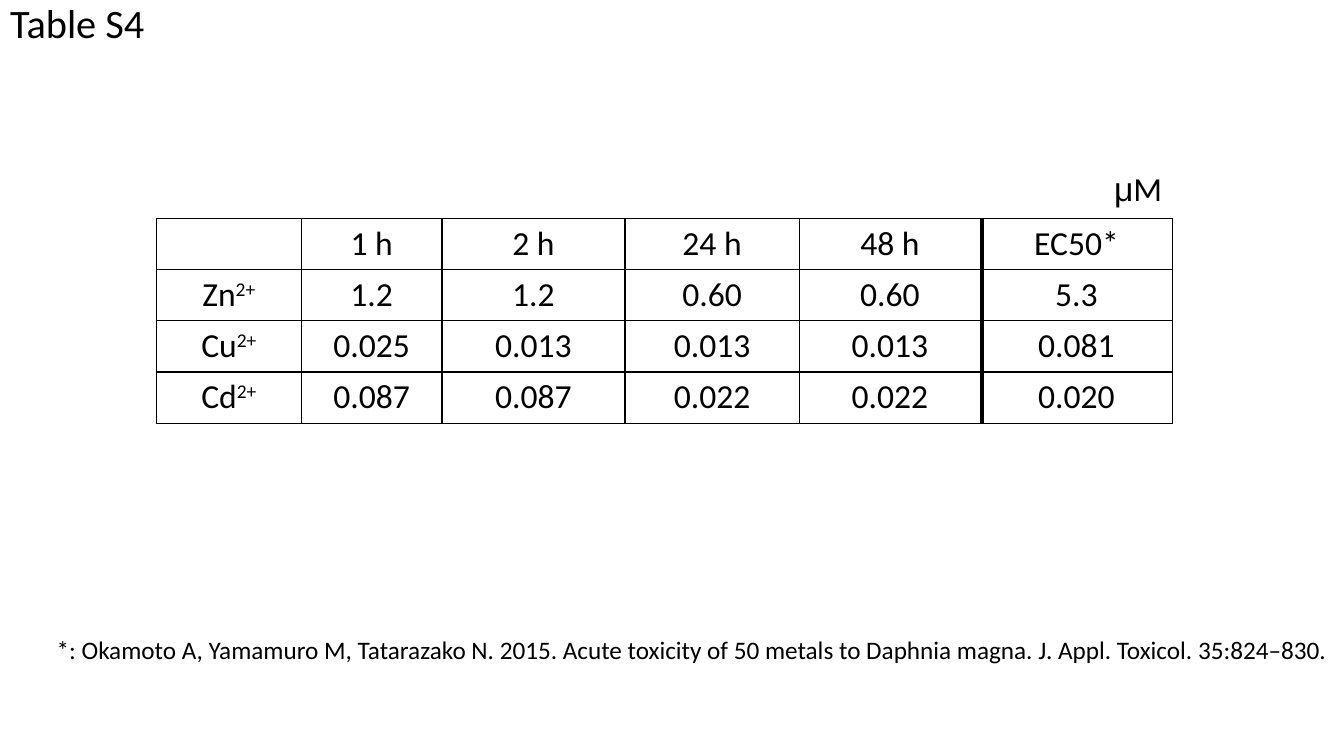
from dataclasses import dataclass

import lxml.etree
import pptx
import pptx.dml.color
import pptx.enum.shapes
import pptx.enum.text
import pptx.oxml.ns
import pptx.slide
import pptx.table
import pptx.text.text
import pptx.util

Pt = pptx.util.Pt
PP_ALIGN = pptx.enum.text.PP_ALIGN
qn = pptx.oxml.ns.qn


@dataclass(frozen=True)
class Theme:
    ink: str = "000000"
    font: str = "Calibri"
    symbol_font: str = "Arial"
    title_size: float = 28.8
    body_size: float = 24
    note_size: float = 18
    border: float = 1
    divider: float = 3


@dataclass(frozen=True)
class Box:
    left: float
    top: float
    width: float
    height: float


@dataclass(frozen=True)
class Span:
    text: str
    font: str
    superscript: bool = False


@dataclass(frozen=True)
class Label:
    spans: tuple[Span, ...]
    box: Box
    size: float
    align: PP_ALIGN
    wrap: bool


@dataclass(frozen=True)
class Metal:
    symbol: str
    values: tuple[str, ...]


THEME = Theme()
SLIDE_WIDTH, SLIDE_HEIGHT = 960, 540
TITLE_BOX = Box(0, 6.5, 111.6, 23)
TABLE_LEFT, TABLE_TOP, ROW_HEIGHT = 111.6, 156.2, 36.4
COLUMN_WIDTHS = (103.7, 100.4, 130.8, 124.4, 129.7, 136.8)
HEADINGS = ("1 h", "2 h", "24 h", "48 h", "EC50*")
METALS = (
    Metal("Zn", ("1.2", "1.2", "0.60", "0.60", "5.3")),
    Metal("Cu", ("0.025", "0.013", "0.013", "0.013", "0.081")),
    Metal("Cd", ("0.087", "0.087", "0.022", "0.022", "0.020")),
)
CITATION = (
    "*: Okamoto A, Yamamuro M, Tatarazako N. 2015. Acute toxicity of 50 metals "
    "to Daphnia magna. J. Appl. Toxicol. 35:824–830."
)
LABELS = (
    Label((Span("μ", THEME.symbol_font), Span("M", THEME.font)),
          Box(788.4, 116.6, 49, 36), THEME.body_size, PP_ALIGN.CENTER, False),
    Label((Span(CITATION, THEME.font),),
          Box(33.4, 449.3, 926.6, 29), THEME.note_size, PP_ALIGN.LEFT, True),
)


def format_run(r: pptx.text.text._Run, font: str, size: float) -> None:
    r.font.name = font
    r.font.size = Pt(size)
    r.font.color.rgb = pptx.dml.color.RGBColor.from_string(THEME.ink)


def write_spans(p: pptx.text.text._Paragraph, spans: tuple[Span, ...],
                size: float, align: PP_ALIGN) -> None:
    p.alignment = align
    for span in spans:
        r = p.add_run()
        r.text = span.text
        format_run(r, span.font, size)
        if span.superscript:
            r.font._element.set("baseline", "30000")


def set_title(s: pptx.slide.Slide, text: str, box: Box) -> None:
    title = s.shapes.title
    title.left, title.top = Pt(box.left), Pt(box.top)
    title.width, title.height = Pt(box.width), Pt(box.height)
    tf = title.text_frame
    tf.text = text
    tf.auto_size = pptx.enum.text.MSO_AUTO_SIZE.NONE
    tf.vertical_anchor = pptx.enum.text.MSO_ANCHOR.MIDDLE
    p = tf.paragraphs[0]
    p.alignment = PP_ALIGN.LEFT
    p.line_spacing = 0.9
    format_run(p.runs[0], THEME.font, THEME.title_size)


def add_label(s: pptx.slide.Slide, label: Label) -> None:
    box = label.box
    sp = s.shapes.add_textbox(Pt(box.left), Pt(box.top), Pt(box.width), Pt(box.height))
    tf = sp.text_frame
    tf.word_wrap = label.wrap
    tf.auto_size = pptx.enum.text.MSO_AUTO_SIZE.SHAPE_TO_FIT_TEXT
    write_spans(tf.paragraphs[0], label.spans, label.size, label.align)


def style_cell(cell: pptx.table._Cell) -> None:
    """Border the cell on every side and clear its fill."""
    tc_pr = cell._tc.get_or_add_tcPr()
    for side in ("a:lnL", "a:lnR", "a:lnT", "a:lnB"):
        ln = lxml.etree.SubElement(tc_pr, qn(side), w=str(Pt(THEME.border)))
        fill = lxml.etree.SubElement(ln, qn("a:solidFill"))
        lxml.etree.SubElement(fill, qn("a:srgbClr"), val=THEME.ink)
    cell.fill.background()


def add_metal_table(s: pptx.slide.Slide) -> None:
    rows = [((), *((Span(h, THEME.font),) for h in HEADINGS))]
    for metal in METALS:
        ion = (Span(metal.symbol, THEME.font), Span("2+", THEME.font, True))
        rows.append((ion, *((Span(v, THEME.font),) for v in metal.values)))
    table = s.shapes.add_table(
        len(rows), len(COLUMN_WIDTHS), Pt(TABLE_LEFT), Pt(TABLE_TOP),
        Pt(sum(COLUMN_WIDTHS)), Pt(ROW_HEIGHT * len(rows))).table
    table.first_row = table.horz_banding = False
    for column, width in zip(table.columns, COLUMN_WIDTHS):
        column.width = Pt(width)
    for i, row in enumerate(rows):
        table.rows[i].height = Pt(ROW_HEIGHT)
        for j, spans in enumerate(row):
            cell = table.cell(i, j)
            style_cell(cell)
            write_spans(cell.text_frame.paragraphs[0], spans,
                        THEME.body_size, PP_ALIGN.CENTER)


def add_divider(s: pptx.slide.Slide) -> None:
    """Draw the heavy rule in front of the EC50 column."""
    x = Pt(TABLE_LEFT + sum(COLUMN_WIDTHS[:-1]) + 0.7)
    bottom = Pt(TABLE_TOP + ROW_HEIGHT * (len(METALS) + 1) + 1)
    line = s.shapes.add_connector(
        pptx.enum.shapes.MSO_CONNECTOR.STRAIGHT, x, Pt(TABLE_TOP), x, bottom)
    line.line.color.rgb = pptx.dml.color.RGBColor.from_string(THEME.ink)
    line.line.width = Pt(THEME.divider)
    lxml.etree.SubElement(line._element.spPr, qn("a:effectLst"))


def main() -> None:
    prs = pptx.Presentation()
    prs.slide_width, prs.slide_height = Pt(SLIDE_WIDTH), Pt(SLIDE_HEIGHT)
    s = prs.slides.add_slide(prs.slide_layouts.get_by_name("Title Only"))
    set_title(s, "Table S4", TITLE_BOX)
    add_metal_table(s)
    add_divider(s)
    for label in LABELS:
        add_label(s, label)
    prs.save("out.pptx")


if __name__ == "__main__":
    main()
